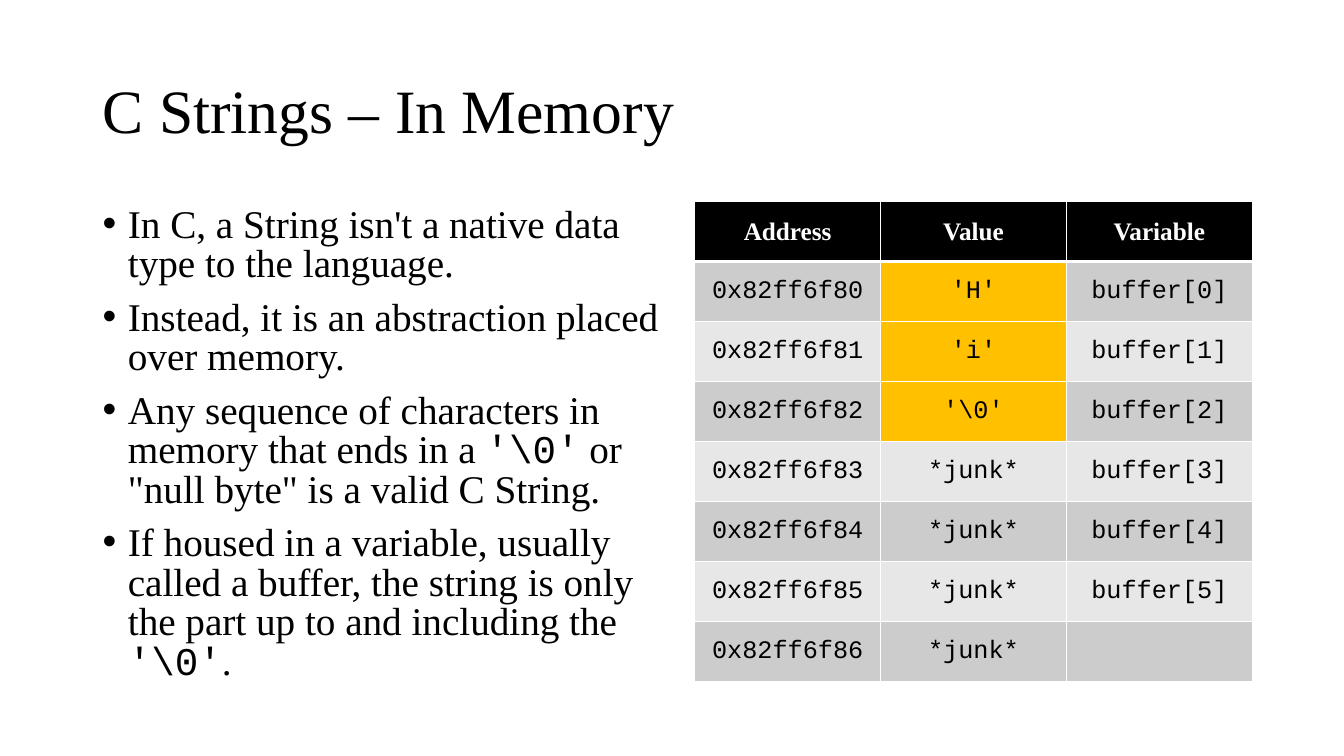
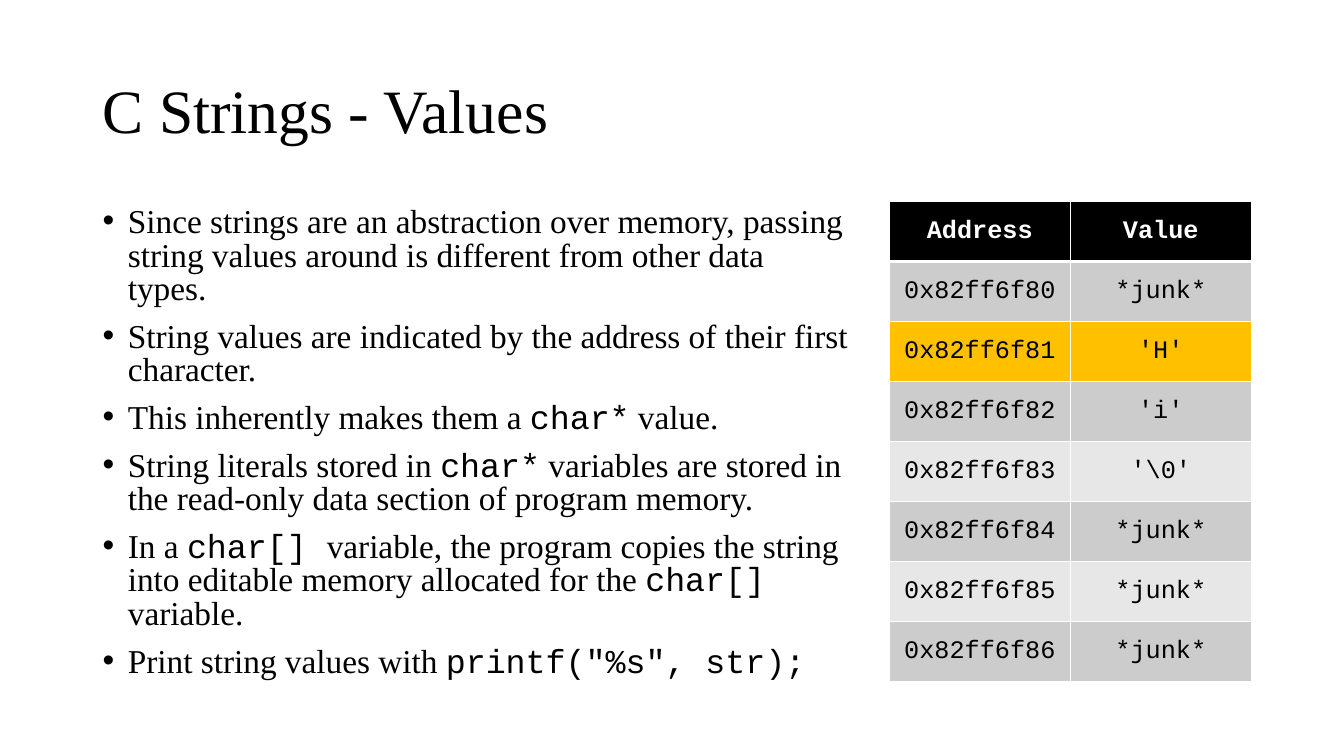
import pptx
import pptx.dml.color
import pptx.enum.text
import pptx.oxml.ns
import pptx.util
from lxml import etree

Inches = pptx.util.Inches
Pt = pptx.util.Pt
RGBColor = pptx.dml.color.RGBColor

BLACK = RGBColor(0x00, 0x00, 0x00)
WHITE = RGBColor(0xFF, 0xFF, 0xFF)
DARK_BAND = RGBColor(0xCC, 0xCC, 0xCC)
LIGHT_BAND = RGBColor(0xE7, 0xE7, 0xE7)
HIGHLIGHT = RGBColor(0xFF, 0xC0, 0x00)

SERIF = "Times New Roman"
MONO = "Courier New"

LEFT, TOP, BODY_HEIGHT = 0.92, 2, 4.76
ADDRESSES = [f"0x82ff6f8{index}" for index in range(7)]

# Text between backticks is set in the monospaced font.
SLIDES = [
    {
        "title": "C Strings – In Memory",
        "bullets": [
            "In C, a String isn't a native data type to the language.",
            "Instead, it is an abstraction placed over memory.",
            r"""Any sequence of characters in memory that ends in a `'\0'` or "null byte" is a valid C String.""",
            "If housed in a variable, usually called a buffer, the string is only "
            r"the part up to and including the `'\0'`.",
        ],
        "bullet_width": 5.75,
        "bullet_size": 28,
        "table_left": 6.89,
        "table_width": 5.53,
        "header_font": SERIF,
        "columns": {
            "Address": ADDRESSES,
            "Value": ["'H'", "'i'", r"'\0'"] + ["*junk*"] * 4,
            "Variable": [f"buffer[{index}]" for index in range(6)] + [""],
        },
        "highlighted": {(1, 1), (2, 1), (3, 1)},
    },
    {
        "title": "C Strings - Values",
        "bullets": [
            "Since strings are an abstraction over memory, passing string values "
            "around is different from other data types.",
            "String values are indicated by the address of their first character.",
            "This inherently makes them a `char*` value.",
            "String literals stored in `char*` variables are stored in the "
            "read-only data section of program memory.",
            "In a `char[] `variable, the program copies the string into editable "
            "memory allocated for the `char[]` variable.",
            'Print string values with `printf("%s", str);`',
        ],
        "bullet_width": 7.59,
        "bullet_size": 23.8,
        "table_left": 8.82,
        "table_width": 3.59,
        "header_font": MONO,
        "columns": {
            "Address": ADDRESSES,
            "Value": ["*junk*", "'H'", "'i'", r"'\0'"] + ["*junk*"] * 3,
        },
        "highlighted": {(2, 0), (2, 1)},
    },
]


def add_run(paragraph, text, font_name, size, color=BLACK, bold=False):
    run = paragraph.add_run()
    run.text = text
    run.font.name = font_name
    run.font.size = Pt(size)
    run.font.color.rgb = color
    run.font.bold = bold


def add_child(parent, tag, **attributes):
    return etree.SubElement(parent, pptx.oxml.ns.qn(tag), attributes)


def add_text_frame(slide, left, top, width, height):
    box = slide.shapes.add_textbox(Inches(left), Inches(top), Inches(width), Inches(height))
    box.text_frame.word_wrap = True
    return box.text_frame


def add_title(slide, title):
    frame = add_text_frame(slide, LEFT, 0.4, 11.5, 1.45)
    frame.vertical_anchor = pptx.enum.text.MSO_ANCHOR.MIDDLE
    paragraph = frame.paragraphs[0]
    paragraph.line_spacing = 0.9
    add_run(paragraph, title, SERIF, 44)


def add_bullets(slide, bullets, width, size):
    frame = add_text_frame(slide, LEFT, TOP, width, BODY_HEIGHT)
    for index, bullet in enumerate(bullets):
        paragraph = frame.add_paragraph() if index else frame.paragraphs[0]
        paragraph.line_spacing = 0.84
        paragraph.space_before = Pt(10)
        properties = paragraph._p.get_or_add_pPr()
        properties.set("marL", str(Inches(0.25)))
        properties.set("indent", str(-Inches(0.25)))
        add_child(properties, "a:buFont", typeface="Arial")
        add_child(properties, "a:buChar", char="•")
        for position, text in enumerate(bullet.split("`")):
            if text:
                add_run(paragraph, text, MONO if position % 2 else SERIF, size)


def set_borders(cell, top, bottom):
    """Draw white borders, 1 pt at the sides and as given above and below."""
    properties = cell._tc.get_or_add_tcPr()
    widths = {"a:lnL": 1, "a:lnR": 1, "a:lnT": top, "a:lnB": bottom}
    for position, (tag, width) in enumerate(widths.items()):
        line = etree.Element(pptx.oxml.ns.qn(tag), {"w": str(Pt(width))})
        add_child(add_child(line, "a:solidFill"), "a:srgbClr", val=str(WHITE))
        properties.insert(position, line)


def add_memory_table(slide, content):
    columns = content["columns"]
    rows = [list(columns)] + list(zip(*columns.values()))
    table = slide.shapes.add_table(
        len(rows), len(columns), Inches(content["table_left"]), Inches(TOP),
        Inches(content["table_width"]), Inches(BODY_HEIGHT),
    ).table
    for row_index, row in enumerate(rows):
        is_header = row_index == 0
        band = BLACK if is_header else DARK_BAND if row_index % 2 else LIGHT_BAND
        for column_index, text in enumerate(row):
            cell = table.cell(row_index, column_index)
            highlighted = (row_index, column_index) in content["highlighted"]
            cell.fill.solid()
            cell.fill.fore_color.rgb = HIGHLIGHT if highlighted else band
            set_borders(cell, top=3 if row_index == 1 else 1, bottom=3 if is_header else 1)
            cell.vertical_anchor = pptx.enum.text.MSO_ANCHOR.MIDDLE
            paragraph = cell.text_frame.paragraphs[0]
            paragraph.alignment = pptx.enum.text.PP_ALIGN.CENTER
            if text:
                add_run(paragraph, text, content["header_font"] if is_header else MONO, 18,
                        WHITE if is_header else BLACK, is_header)


def main():
    presentation = pptx.Presentation()
    presentation.slide_width = Inches(13.33)
    presentation.slide_height = Inches(7.5)
    for content in SLIDES:
        slide = presentation.slides.add_slide(presentation.slide_layouts[6])
        add_title(slide, content["title"])
        add_bullets(slide, content["bullets"], content["bullet_width"], content["bullet_size"])
        add_memory_table(slide, content)
    presentation.save("out.pptx")


if __name__ == "__main__":
    main()
